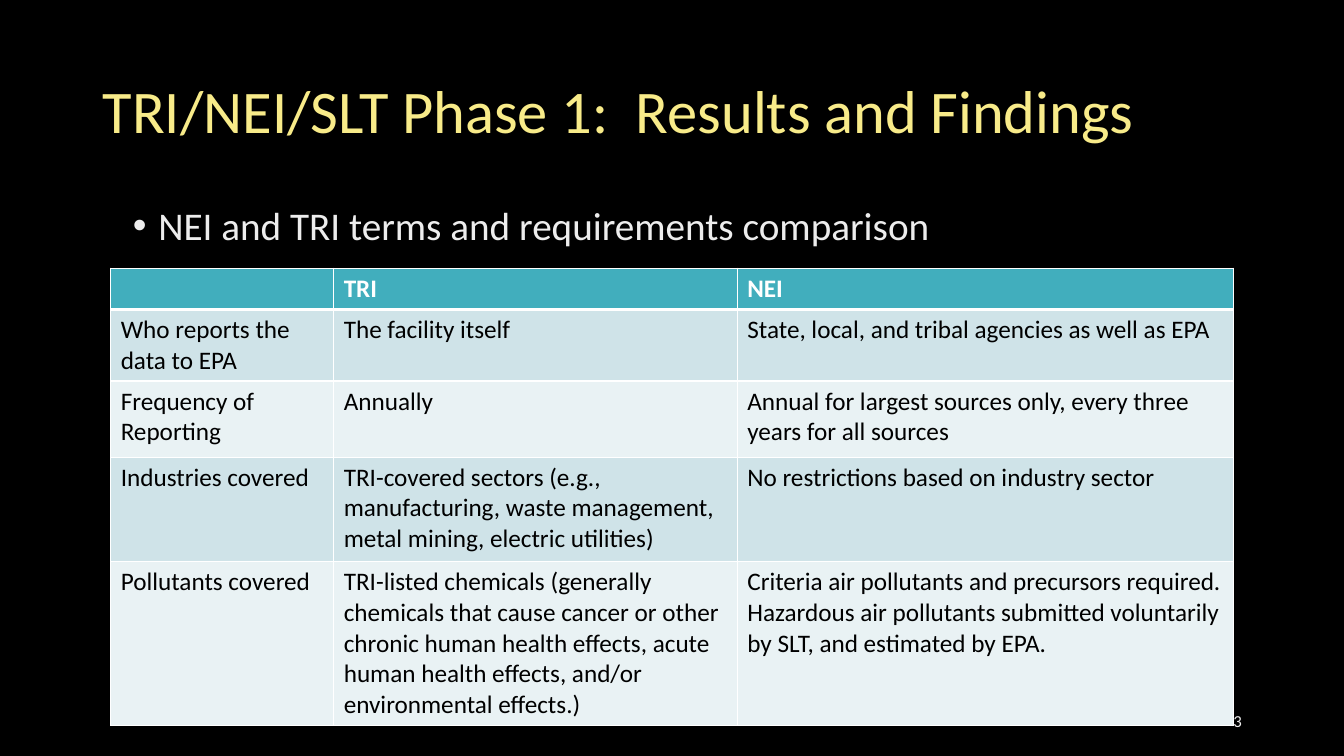
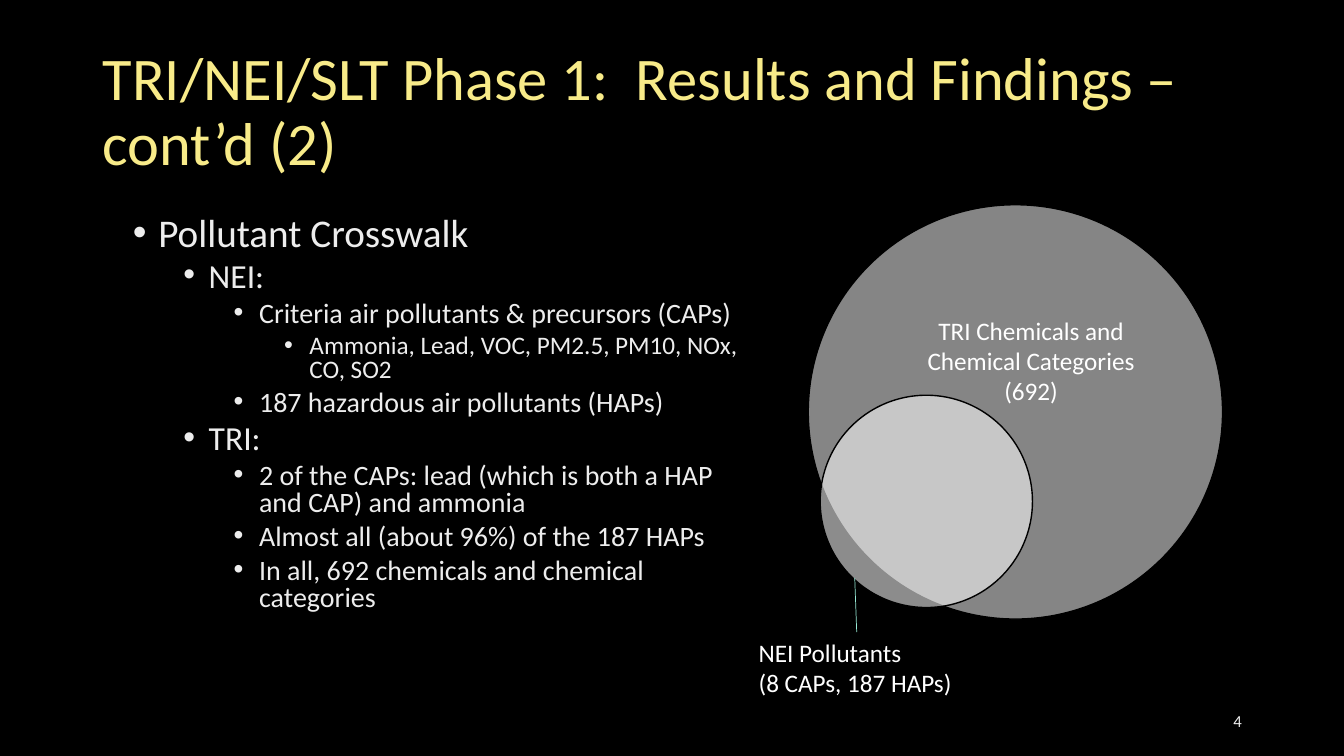
from pptx import Presentation
from pptx.dml.color import RGBColor
from pptx.enum.shapes import MSO_CONNECTOR, MSO_SHAPE
from pptx.enum.text import MSO_ANCHOR, PP_ALIGN
from pptx.oxml.xmlchemy import OxmlElement
from pptx.util import Cm, Pt

FONT = "Calibri"
COLORS = {
    "back": "000000", "title": "F8EB89", "body": "EDEDED", "white": "FFFFFF",
    "black": "000000", "header": "41AEBD", "band_dark": "CFE3E8",
    "band_light": "E9F2F4", "leader": "97E9D5",
}
TITLE_BOX = (2.34, 1.02, 29.21, 3.68)
NUMBER_BOX = (23.93, 17.65, 7.62, 1.02)
LEVEL_SIZES = (28, 24, 20, 18)
LEVEL_STEP, HANGING = 1.27, 0.64

COL_WIDTHS = (5.62, 10.17, 12.5)
ROW_HEIGHTS = (1.04, 1.8, 1.92, 2.63, 4.14)
COMPARISON = (
    ("", "TRI", "NEI"),
    ("Who reports the data to EPA", "The facility itself",
     "State, local, and tribal agencies as well as EPA"),
    ("Frequency of Reporting", "Annually",
     "Annual for largest sources only, every three years for all sources"),
    ("Industries covered",
     "TRI-covered sectors (e.g., manufacturing, waste management, metal mining, "
     "electric utilities)",
     "No restrictions based on industry sector"),
    ("Pollutants covered",
     "TRI-listed chemicals (generally chemicals that cause cancer or other chronic "
     "human health effects, acute human health effects, and/or environmental effects.)",
     "Criteria air pollutants and precursors required. Hazardous air pollutants "
     "submitted voluntarily by SLT, and estimated by EPA."),
)
CROSSWALK = (
    (0, "Pollutant Crosswalk"),
    (1, "NEI:"),
    (2, "Criteria air pollutants & precursors (CAPs)"),
    (3, "Ammonia, Lead, VOC, PM2.5, PM10, NOx, CO, SO2"),
    (2, "187 hazardous air pollutants (HAPs)"),
    (1, "TRI:"),
    (2, "2 of the CAPs: lead (which is both a HAP and CAP) and ammonia"),
    (2, "Almost all (about 96%) of the 187 HAPs"),
    (2, "In all, 692 chemicals and chemical categories"),
)


def rgb(name):
    """Return a palette colour."""
    return RGBColor.from_string(COLORS[name])


def sub(parent, tag, **attrs):
    """Append an XML element with attributes and return it."""
    child = OxmlElement(tag)
    for key, value in attrs.items():
        child.set(key, str(value))
    parent.append(child)
    return child


def write(tf, text, size=18, color="white", bold=False, align=None,
          spacing=None, before=None, level=None):
    """Write one paragraph, filling the empty first one before adding more."""
    first = not tf.text
    p = tf.paragraphs[0] if first else tf.add_paragraph()
    if align is not None:
        p.alignment = align
    if spacing:
        p.line_spacing = spacing
    if before and not first:
        p.space_before = Pt(before)
    if level is not None:
        p.level = level
        pPr = p._p.get_or_add_pPr()
        pPr.set("marL", str(Cm(HANGING + level * LEVEL_STEP)))
        pPr.set("indent", str(-Cm(HANGING)))
        sub(pPr, "a:buFont", typeface="Arial")
        sub(pPr, "a:buChar", char="•")
    r = p.add_run()
    r.text = text
    r.font.name, r.font.size, r.font.bold = FONT, Pt(size), bold
    r.font.color.rgb = rgb(color)


def text_box(s, box, anchor=MSO_ANCHOR.TOP):
    """Add a wrapping text box and return its text frame."""
    tf = s.shapes.add_textbox(*map(Cm, box)).text_frame
    tf.word_wrap = True
    tf.vertical_anchor = anchor
    return tf


def base_slide(prs, title, number):
    """Add a black slide with its title and slide number."""
    s = prs.slides.add_slide(prs.slide_layouts[6])
    s.background.fill.solid()
    s.background.fill.fore_color.rgb = rgb("back")
    write(text_box(s, TITLE_BOX, MSO_ANCHOR.MIDDLE), title, size=43.2,
          color="title", spacing=0.9)
    write(text_box(s, NUMBER_BOX, MSO_ANCHOR.MIDDLE), str(number), size=12,
          color="body", align=PP_ALIGN.RIGHT)
    return s


def bullets(s, box, items, spacing):
    """Add a bulleted outline of (level, text) items."""
    tf = text_box(s, box)
    for level, text in items:
        write(tf, text, size=LEVEL_SIZES[level], color="body", spacing=spacing,
              before=5, level=level)


def cell_borders(cell, bottom):
    """Draw white borders, with the given bottom width in points."""
    tcPr = cell._tc.get_or_add_tcPr()
    for i, (side, width) in enumerate((("L", 1), ("R", 1), ("T", 1), ("B", bottom))):
        ln = OxmlElement(f"a:ln{side}")
        ln.set("w", str(Pt(width)))
        sub(sub(ln, "a:solidFill"), "a:srgbClr", val=COLORS["white"])
        tcPr.insert(i, ln)


def comparison_table(s, left, top):
    """Add the table comparing TRI and NEI."""
    table = s.shapes.add_table(
        len(ROW_HEIGHTS), len(COL_WIDTHS), Cm(left), Cm(top),
        Cm(sum(COL_WIDTHS)), Cm(sum(ROW_HEIGHTS))).table
    table.horz_banding = False
    for col, width in zip(table.columns, COL_WIDTHS):
        col.width = Cm(width)
    for i, (row, height, texts) in enumerate(zip(table.rows, ROW_HEIGHTS, COMPARISON)):
        row.height = Cm(height)
        header = i == 0
        fill = "header" if header else ("band_light", "band_dark")[i % 2]
        for cell, text in zip(row.cells, texts):
            cell.fill.solid()
            cell.fill.fore_color.rgb = rgb(fill)
            cell_borders(cell, bottom=3 if header else 1)
            if text:
                write(cell.text_frame, text, bold=header,
                      color="white" if header else "black")


def circle(s, box, opacity):
    """Add a translucent white circle with a black outline."""
    sp = s.shapes.add_shape(MSO_SHAPE.OVAL, *map(Cm, box))
    sp.shadow.inherit = False
    sp.fill.solid()
    sp.fill.fore_color.rgb = rgb("white")
    clr = sp._element.spPr.find(".//{*}srgbClr")
    sub(clr, "a:alpha", val=opacity * 1000)
    sp.line.color.rgb = rgb("black")
    sp.line.width = Pt(1)


def venn(s, left, top, size):
    """Add the overlapping pollutant circles with their labels."""
    circle(s, (left, top, size, size), 52)
    circle(s, (left + 0.3, top + 4.8, 5.35, 5.35), 55)
    leader = s.shapes.add_connector(
        MSO_CONNECTOR.STRAIGHT, Cm(left + 1.22), Cm(top + 10.77),
        Cm(left + 1.17), Cm(top + 9.4))
    leader.line.color.rgb = rgb("leader")
    leader.line.width = Pt(0.5)
    sub(leader._element.spPr, "a:effectLst")
    labels = (
        ((left + 2.54, top + 2.66, 6.15, 2.57), PP_ALIGN.CENTER,
         ("TRI Chemicals and Chemical Categories", "(692)")),
        ((left - 1.5, top + 10.77, 10.67, 1.8), PP_ALIGN.LEFT,
         ("NEI Pollutants", "(8 CAPs, 187 HAPs)")),
    )
    for box, align, lines in labels:
        tf = text_box(s, box)
        for line in lines:
            write(tf, line, align=align)


def main():
    """Build and save the presentation."""
    prs = Presentation()
    prs.slide_width, prs.slide_height = Cm(33.87), Cm(19.05)
    title = "TRI/NEI/SLT Phase 1:  Results and Findings"

    s = base_slide(prs, title, 3)
    bullets(s, (3.1, 5.08, 28.42, 4.04),
            [(0, "NEI and TRI terms and requirements comparison")], 0.9)
    comparison_table(s, 2.79, 6.76)

    s = base_slide(prs, f"{title} – cont’d (2)", 4)
    bullets(s, (3.1, 5.36, 15.75, 10.85), CROSSWALK, 0.8)
    venn(s, 20.37, 5.16, 10.44)

    prs.save("out.pptx")


if __name__ == "__main__":
    main()
